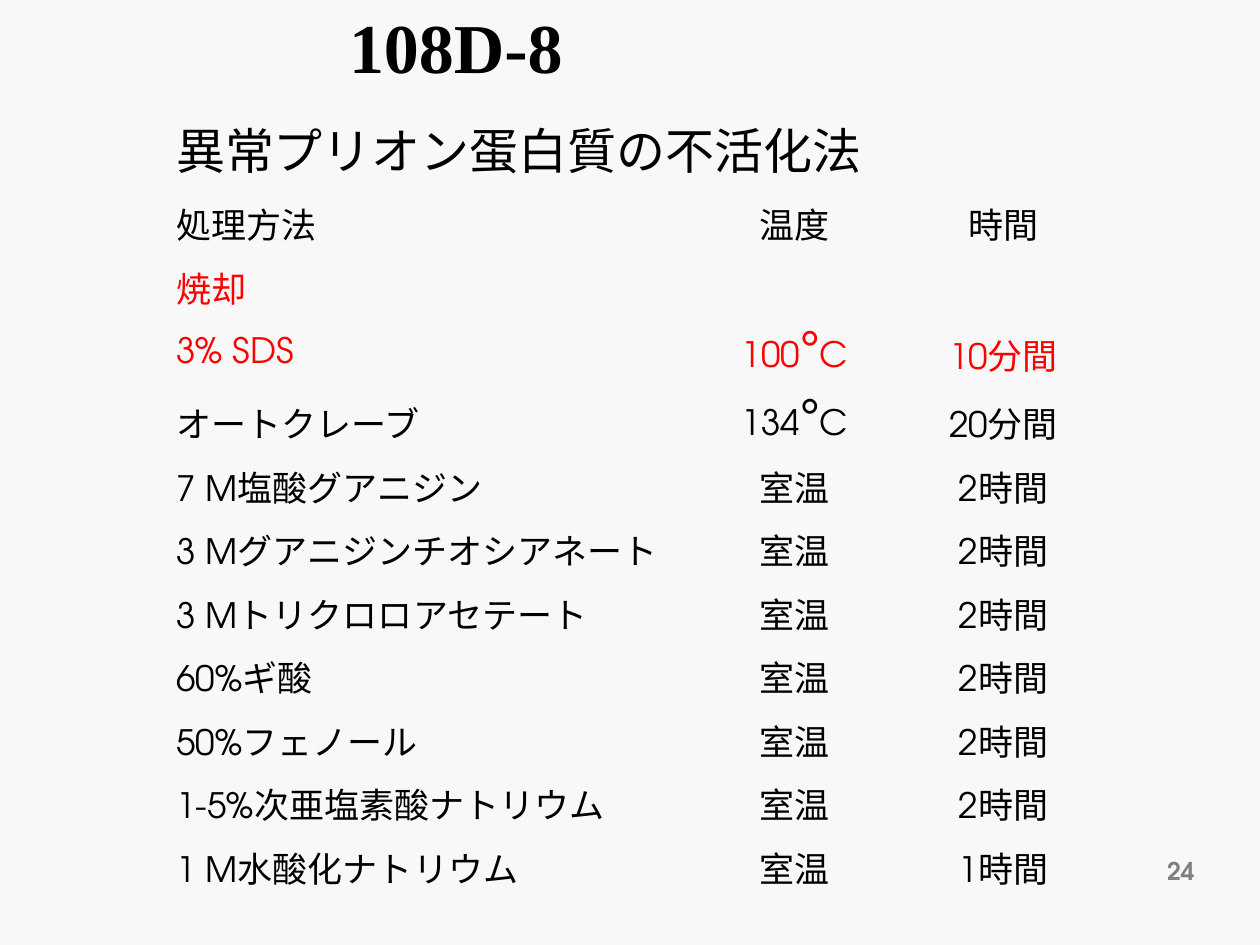
from lxml import etree
from pptx import Presentation
from pptx.dml.color import RGBColor
from pptx.enum.shapes import MSO_SHAPE
from pptx.enum.text import MSO_ANCHOR, MSO_AUTO_SIZE, PP_ALIGN
from pptx.oxml.ns import qn
from pptx.util import Inches, Pt

LEFT, CENTER, RIGHT = PP_ALIGN.LEFT, PP_ALIGN.CENTER, PP_ALIGN.RIGHT
TOP, MIDDLE, BOTTOM = MSO_ANCHOR.TOP, MSO_ANCHOR.MIDDLE, MSO_ANCHOR.BOTTOM
RECT = MSO_SHAPE.RECTANGLE
NO_AUTOFIT = MSO_AUTO_SIZE.NONE
TITLE_ONLY = 5
NO_STYLE = "{2D5ABB26-0587-4C30-8999-92F81FD0307C}"

COLS, ROWS, UNIT = 100, 75, Inches(0.1)
SANS, SERIF = "TeX Gyre Adventor", "Times New Roman"
PAPER, BLACK, RED, GRAY = "F8F8F8", "000000", "FF0000", "808080"

COL_WIDTHS = (40.9, 18.4, 14.7)
TALL_ROWS = {0: 4.5, 2: 5.7, 3: 5.1}
RED_ROWS = (1, 2)
METHODS = [
    ("処理方法", "温度", "時間"),
    ("焼却", "", ""),
    ("3% SDS", "100°C", "10分間"),
    ("オートクレーブ", "134°C", "20分間"),
    ("7 M塩酸グアニジン", "室温", "2時間"),
    ("3 Mグアニジンチオシアネート", "室温", "2時間"),
    ("3 Mトリクロロアセテート", "室温", "2時間"),
    ("60%ギ酸", "室温", "2時間"),
    ("50%フェノール", "室温", "2時間"),
    ("1-5%次亜塩素酸ナトリウム", "室温", "2時間"),
    ("1 M水酸化ナトリウム", "室温", "1時間"),
]
RULES = {0: {"lnT": 2.25, "lnB": 1}, 1: {"lnT": 1}, len(METHODS) - 1: {"lnB": 2.25}}


def rgb(color):
    return RGBColor.from_string(color)


def grid(*cells):
    return [int(n * UNIT) for n in cells]


def add_run(p, text, color, **formats):
    r = p.add_run()
    r.text = text
    r.font.color.rgb = rgb(color)
    for name, value in formats.items():
        setattr(r.font, name, value)


def write_line(sp, text, color, align, anchor, wrap, **formats):
    tf = sp.text_frame
    settings = {"word_wrap": wrap, "vertical_anchor": anchor, "auto_size": NO_AUTOFIT}
    for name, value in settings.items():
        setattr(tf, name, value)
    p = tf.paragraphs[0]
    p.alignment = align
    add_run(p, text, color, **formats)


def add_title(s, box):
    sp = s.shapes.title
    for name, value in zip(("left", "top", "width", "height"), grid(*box)):
        setattr(sp, name, value)
    write_line(sp, "108D-8", BLACK, LEFT, TOP, False,
               name=SERIF, size=Pt(40), bold=True)


def add_heading(s, box):
    sp = s.shapes.add_shape(RECT, *grid(*box))
    sp.shadow.inherit = False
    sp.fill.solid()
    sp.fill.fore_color.rgb = rgb(PAPER)
    sp.line.fill.background()
    write_line(sp, "異常プリオン蛋白質の不活化法", BLACK, LEFT, TOP, False,
               name=SANS, size=Pt(28))


def add_page_number(s, box):
    sp = s.shapes.add_textbox(*grid(*box))
    write_line(sp, "24", GRAY, RIGHT, BOTTOM, True,
               name=SANS, size=Pt(14), bold=True)


def rule_cell(cell, rules):
    tc_pr = cell._tc.get_or_add_tcPr()
    for i, (side, width) in enumerate(rules.items()):
        ln = etree.Element(qn(f"a:{side}"), w=str(Pt(width)))
        fill = etree.SubElement(ln, qn("a:solidFill"))
        etree.SubElement(fill, qn("a:srgbClr"), val=PAPER)
        tc_pr.insert(i, ln)


def fill_cell(cell, text, color, align):
    cell.vertical_anchor = MIDDLE
    cell.fill.background()
    p = cell.text_frame.paragraphs[0]
    p.alignment = align
    p.space_before = Pt(4)
    number, degree, unit = text.partition("°")
    for part, size in ((number, 20), (degree, 28), (unit, 20)):
        if part:
            add_run(p, part, color, name=SANS, size=Pt(size))


def add_methods(s, box):
    frame = s.shapes.add_table(len(METHODS), len(COL_WIDTHS), *grid(*box))
    table = frame.table
    table.first_row = table.horz_banding = False
    table._tbl.tblPr.find(qn("a:tableStyleId")).text = NO_STYLE
    for col, width in zip(table.columns, COL_WIDTHS):
        col.width = int(width * UNIT)
    plain = (box[3] - sum(TALL_ROWS.values())) / (len(METHODS) - len(TALL_ROWS))
    for i, values in enumerate(METHODS):
        table.rows[i].height = int(TALL_ROWS.get(i, plain) * UNIT)
        color = RED if i in RED_ROWS else BLACK
        for j, text in enumerate(values):
            cell = table.cell(i, j)
            fill_cell(cell, text, color, CENTER if j else LEFT)
            rule_cell(cell, RULES.get(i, {}))


def main():
    prs = Presentation()
    prs.slide_width, prs.slide_height = COLS * UNIT, ROWS * UNIT
    s = prs.slides.add_slide(prs.slide_layouts[TITLE_ONLY])
    s.background.fill.solid()
    s.background.fill.fore_color.rgb = rgb(PAPER)
    add_methods(s, (13, 15.2, 74, 50.9))
    add_heading(s, (13, 9.1, 57, 5.7))
    add_page_number(s, (75, 65.8, 20.8, 5))
    add_title(s, (26.7, -0.2, 19.2, 7.7))
    prs.save("out.pptx")


if __name__ == "__main__":
    main()
